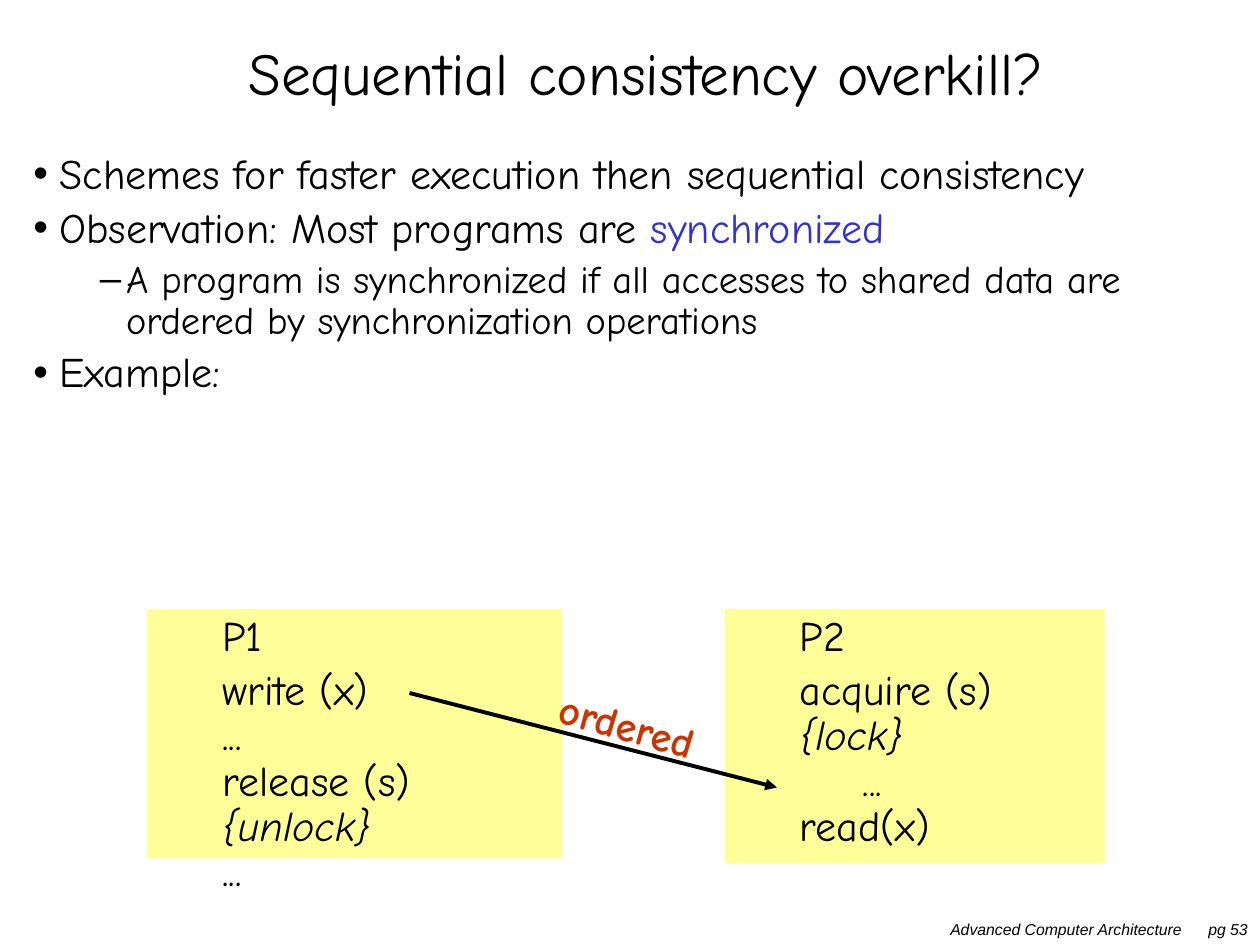
from lxml import etree
from pptx import Presentation
from pptx.dml.color import RGBColor
from pptx.enum import shapes as sh, text as tx
from pptx.oxml.ns import qn
from pptx.util import Pt

BLACK = RGBColor(0x00, 0x00, 0x00)
BLUE = RGBColor(0x33, 0x33, 0xCC)
RED = RGBColor(0xCC, 0x33, 0x00)
YELLOW = RGBColor(0xFF, 0xFF, 0x99)
FACE = "Comic Neue"


def style(par, size, color=BLACK, face=FACE, line=None, before=0):
    font = par.font
    font.size, font.name, font.color.rgb = Pt(size), face, color
    par.space_before = Pt(before)
    if line:
        par.line_spacing = line


def indent(par, left, first=0, mark=None):
    props = par._p.get_or_add_pPr()
    props.set("marL", str(Pt(left)))
    props.set("indent", str(Pt(first)))
    if mark:
        etree.SubElement(props, qn("a:buFont"), typeface="Arial")
        etree.SubElement(props, qn("a:buChar"), char=mark)


def add_tab(par, pos):
    """Set a left tab stop; call after style."""
    tabs = etree.Element(qn("a:tabLst"))
    etree.SubElement(tabs, qn("a:tab"), pos=str(Pt(pos)), algn="l")
    par._p.get_or_add_pPr().find(qn("a:defRPr")).addprevious(tabs)


def add_runs(par, runs):
    """Add (text, italic, color) runs; a newline becomes a line break."""
    for words, slant, color in runs:
        for i, part in enumerate(words.split("\n")):
            if i:
                par.add_line_break()
            if part:
                run = par.add_run()
                run.text = part
                if slant:
                    run.font.italic = True
                if color is not None:
                    run.font.color.rgb = color


def add_text(slide, box, wrap=True):
    frame = slide.shapes.add_textbox(*map(Pt, box)).text_frame
    frame.word_wrap = wrap
    return frame


def add_footer(slide, box):
    frame = add_text(slide, box)
    frame.margin_left, frame.margin_right = Pt(29.5), Pt(0)
    par = frame.paragraphs[0]
    par.text = "Advanced Computer Architecture\tpg 53"
    style(par, 9, face="Arial")
    par.font.italic = True
    add_tab(par, 147.5)


def add_title(slide, box):
    frame = add_text(slide, box)
    frame.vertical_anchor = tx.MSO_ANCHOR.MIDDLE
    par = frame.paragraphs[0]
    par.text = "Sequential consistency overkill?"
    par.alignment = tx.PP_ALIGN.CENTER
    style(par, 34, line=0.8)


def add_body(slide, box):
    frame = add_text(slide, box)
    items = [
        (0, [("Schemes for faster execution then sequential consistency", False, None)]),
        (0, [("Observation: Most programs are ", False, None),
             ("synchronized", False, BLUE)]),
        (1, [("A program is synchronized if all accesses to shared data are "
              "ordered by synchronization operations", False, None)]),
        (0, [("Example:", False, None)]),
    ]
    for i, (level, runs) in enumerate(items):
        par = frame.add_paragraph() if i else frame.paragraphs[0]
        par.level = level
        size = (24, 22)[level]
        indent(par, (15, 53)[level], -15, "•–"[level])
        style(par, size, line=0.9, before=size / 5)
        add_runs(par, runs)


def add_process(slide, box, name, steps):
    rect = slide.shapes.add_shape(sh.MSO_SHAPE.RECTANGLE, *map(Pt, box))
    rect.shadow.inherit = False
    rect.fill.solid()
    rect.fill.fore_color.rgb = YELLOW
    rect.line.fill.background()
    frame = rect.text_frame
    frame.word_wrap = True
    frame.vertical_anchor = tx.MSO_ANCHOR.TOP
    for i, runs in enumerate(([(name, False, None)], steps)):
        par = frame.add_paragraph() if i else frame.paragraphs[0]
        par.level = 1
        par.alignment = tx.PP_ALIGN.LEFT
        indent(par, 36)
        style(par, 24, line=0.9, before=5)
        add_tab(par, 72)
        add_runs(par, runs)


def add_order(slide, box):
    """Arrow across the box, with its tilted label above the middle."""
    left, top, width, height = box
    line = slide.shapes.add_connector(
        sh.MSO_CONNECTOR.STRAIGHT,
        *map(Pt, (left, top, left + width, top + height)))
    line.line.color.rgb = BLACK
    line.line.width = Pt(2.25)
    etree.SubElement(line.line._get_or_add_ln(), qn("a:tailEnd"), type="triangle")
    etree.SubElement(line._element.spPr, qn("a:effectLst"))

    label = slide.shapes.add_textbox(
        *map(Pt, (left + 78, top + 0.7, 96, 36)))
    label.rotation = 15.3
    label.text_frame.word_wrap = False
    par = label.text_frame.paragraphs[0]
    par.text = "ordered"
    style(par, 24, RED)
    par.font.bold = True


def main():
    deck = Presentation()
    deck.slide_width, deck.slide_height = Pt(720), Pt(540)
    slide = deck.slides.add_slide(deck.slide_layouts[6])

    add_footer(slide, (513.5, 522, 206.5, 18))
    add_title(slide, (36, 10.8, 666, 67.7))
    add_body(slide, (12, 84, 708, 246))

    # Two processes and the order between them
    add_process(slide, (414, 348, 217.5, 145.5), "P2", [
        ("acquire (s)", False, None),
        (" {lock}\n", True, None),
        ("\t...\nread(x)", False, None)])
    add_process(slide, (84, 348, 237.5, 142.5), "P1", [
        ("write (x)\n...\nrelease (s) ", False, None),
        ("{unlock}\n", True, None),
        ("...", False, None)])
    add_order(slide, (234, 396, 210, 54))

    deck.save("out.pptx")


if __name__ == "__main__":
    main()
